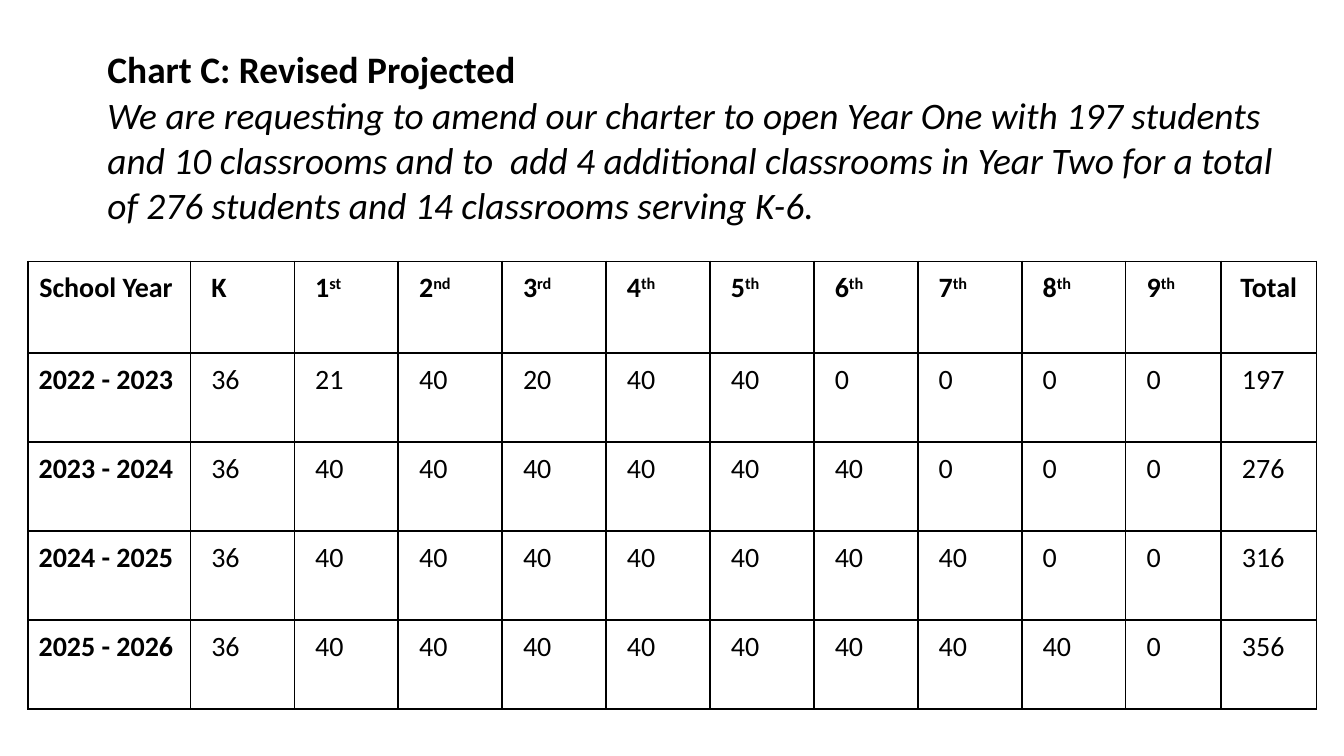
import pptx
import pptx.dml.color
import pptx.enum.text
import pptx.oxml
import pptx.oxml.ns
import pptx.util

Pt = pptx.util.Pt
COLORS = {"text": "000000", "border": "000000", "page": "FFFFFF"}
FONT = "Calibri"

HEADING = "Chart C: Revised Projected"
REQUEST = (
    "We are requesting to amend our charter to open Year One with 197 students "
    "and 10 classrooms and to  add 4 additional classrooms in Year Two for a "
    "total of 276 students and 14 classrooms serving K-6."
)
GRADES = [("K", ""), ("1", "st"), ("2", "nd"), ("3", "rd")]
GRADES += [(str(grade), "th") for grade in range(4, 10)]
HEADER = [("School Year ", ""), *GRADES, ("Total", "")]
ENROLLMENT = [
    ("2022 - 2023 ", 36, 21, 40, 20, 40, 40, 0, 0, 0, 0, 197),
    ("2023 - 2024 ", 36, 40, 40, 40, 40, 40, 40, 0, 0, 0, 276),
    ("2024 - 2025 ", 36, 40, 40, 40, 40, 40, 40, 40, 0, 0, 316),
    ("2025 - 2026 ", 36, 40, 40, 40, 40, 40, 40, 40, 40, 0, 356),
]
ROWS = [HEADER] + [[(str(value), "") for value in row] for row in ENROLLMENT]
COLUMN_WIDTHS = [87] + [55.7] * 9 + [51.1] * 2
ROW_HEIGHTS = [49] + [47.7] * 4
CELL_MARGIN = 5.2


def color(name):
    return pptx.dml.color.RGBColor.from_string(COLORS[name])


def style(para, size, bold=False, italic=False, indent=0):
    para.font.name = FONT
    para.font.size = Pt(size)
    para.font.bold = bold
    para.font.italic = italic
    para.font.color.rgb = color("text")
    properties = para._p.get_or_add_pPr()
    properties.set("marL", str(Pt(indent)))
    properties.set("indent", "0")


def set_margins(target, size):
    target.margin_left = target.margin_right = Pt(size)
    target.margin_top = target.margin_bottom = Pt(size)


def add_borders(cell):
    properties = cell._tc.get_or_add_tcPr()
    for position, side in enumerate(("lnL", "lnR", "lnT", "lnB")):
        line = pptx.oxml.parse_xml(
            f'<a:{side} {pptx.oxml.ns.nsdecls("a")} w="{Pt(1)}"><a:solidFill>'
            f'<a:srgbClr val="{COLORS["border"]}"/></a:solidFill></a:{side}>'
        )
        properties.insert(position, line)


def fill_cell(cell, text, suffix, row, column):
    set_margins(cell, CELL_MARGIN)
    cell.fill.background()
    add_borders(cell)
    para = cell.text_frame.paragraphs[0]
    para.add_run().text = text
    if suffix:
        span = para.add_run()
        span.text = suffix
        span._r.get_or_add_rPr().set("baseline", "30000")
    centered = column == 0 or (row == 0 and column == len(HEADER) - 1)
    style(para, 15, bold=row == 0 or column == 0, indent=0 if centered else 6)
    if centered:
        para.alignment = pptx.enum.text.PP_ALIGN.CENTER


deck = pptx.Presentation()
deck.slide_width, deck.slide_height = Pt(720), Pt(405)
page = deck.slides.add_slide(deck.slide_layouts[6])
page.background.fill.solid()
page.background.fill.fore_color.rgb = color("page")

box = page.shapes.add_textbox(Pt(24.5), Pt(17.3), Pt(671), Pt(111))
frame = box.text_frame
frame.word_wrap = True
set_margins(frame, 7.2)
heading = frame.paragraphs[0]
heading.text = HEADING
style(heading, 20, bold=True, indent=26)
request = frame.add_paragraph()
request.text = REQUEST
style(request, 20, italic=True, indent=26)
request.line_spacing = 1.01
request.space_before = Pt(0.6)

table = page.shapes.add_table(
    len(ROWS), len(HEADER), Pt(15), Pt(140),
    Pt(sum(COLUMN_WIDTHS)), Pt(sum(ROW_HEIGHTS)),
).table
table.first_row = table.horz_banding = False
for column, width in zip(table.columns, COLUMN_WIDTHS):
    column.width = Pt(width)
for row, height in zip(table.rows, ROW_HEIGHTS):
    row.height = Pt(height)
for row, entries in enumerate(ROWS):
    for column, (text, suffix) in enumerate(entries):
        fill_cell(table.cell(row, column), text, suffix, row, column)

deck.save("out.pptx")
